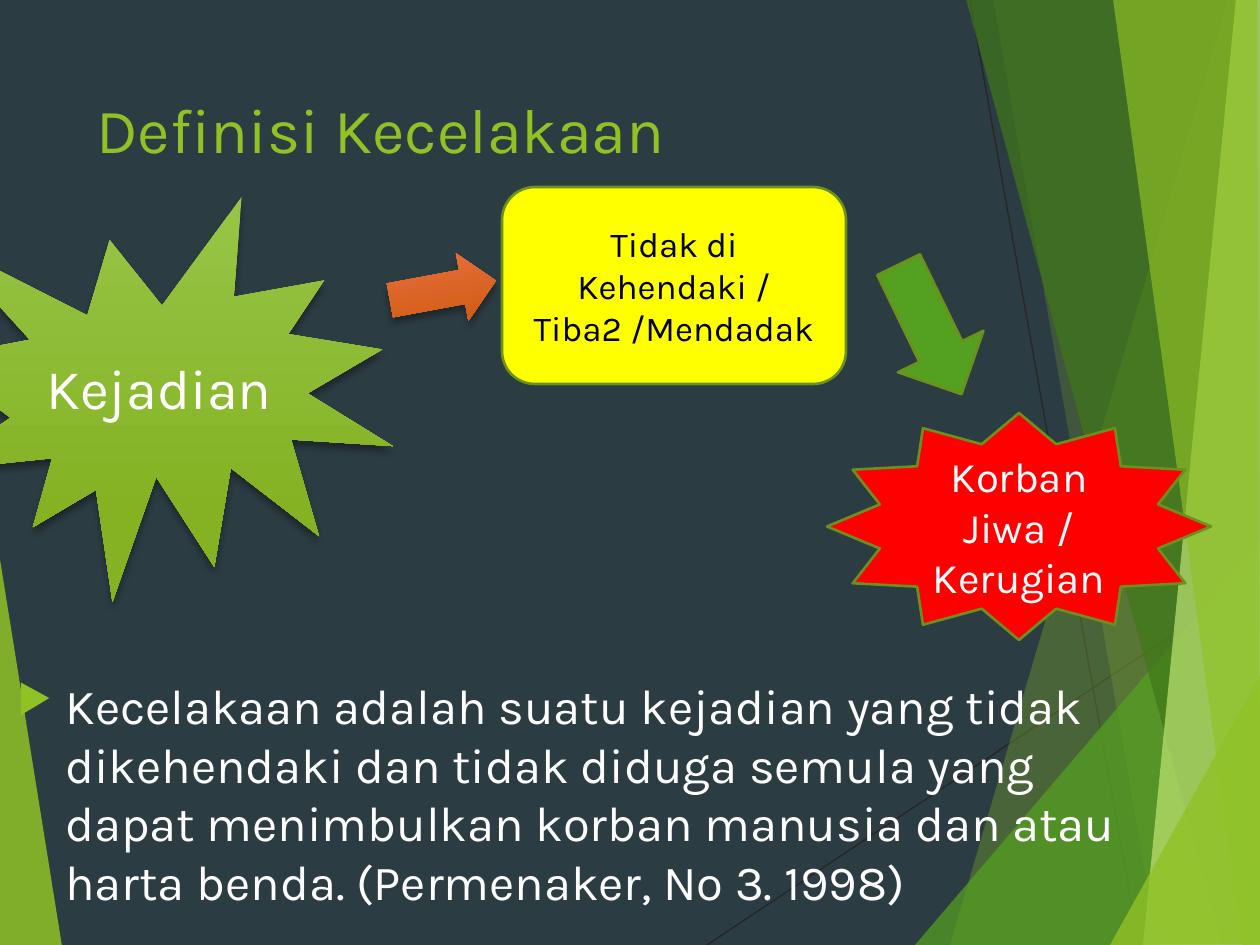
from lxml import etree
from pptx import Presentation
from pptx.dml.color import RGBColor
from pptx.enum.shapes import MSO_CONNECTOR, MSO_SHAPE
from pptx.enum.text import MSO_ANCHOR, PP_ALIGN
from pptx.oxml.ns import qn
from pptx.util import Pt

EMU_PER_PX = 914400 / 126
WIDTH, HEIGHT = 1260, 945
FONT = "Karla"
LINE = MSO_CONNECTOR.STRAIGHT
SEAL, STAR = MSO_SHAPE.EXPLOSION1, MSO_SHAPE.STAR_12_POINT
ARROW, ROUNDED = MSO_SHAPE.RIGHT_ARROW, MSO_SHAPE.ROUNDED_RECTANGLE
CENTER, LEFT = PP_ALIGN.CENTER, PP_ALIGN.LEFT
MIDDLE, TOP = MSO_ANCHOR.MIDDLE, MSO_ANCHOR.TOP

COLORS = {
    "background": "2C3C43", "hairline": "262626", "lime": "90C226",
    "green": "54A021", "forest": "3F7819", "pale": "C0E474",
    "outline": "6B901C", "yellow": "FFFF00", "red": "FF0000",
    "white": "FFFFFF", "black": "000000",
    "lime top": "97C547", "lime bottom": "84B223",
    "orange top": "E87242", "orange bottom": "D35D16",
}

TITLE = "Definisi Kecelakaan"
DEFINITION = ("Kecelakaan adalah suatu kejadian yang tidak dikehendaki dan tidak "
              "diduga semula yang dapat menimbulkan korban manusia dan atau harta "
              "benda. (Permenaker, No 3. 1998)")

# Background: hairlines (x1, y1, x2, y2), then facets (colour, opacity %, corners)
HAIRLINES = [(707, 945, 1261, 576), (970, 0, 1139, 945)]
FACETS = [
    ("lime", 85, [(-1, 553), (62, 946), (-1, 945)]),
    ("lime", 30, [(1228, 0), (950, 945), (1262, 946), (1261, 1)]),
    ("lime", 20, [(993, -1), (1158, 945), (1261, 945), (1261, -1)]),
    ("green", 72, [(915, 945), (1260, 541), (1261, 945)]),
    ("forest", 70, [(966, -1), (1222, 945), (1261, 944), (1261, -1)]),
    ("pale", 70, [(1236, -1), (1143, 945), (1261, 945), (1260, -1)]),
    ("lime", 65, [(1113, -1), (1242, 945), (1260, 945), (1257, -1)]),
    ("lime", 80, [(1110, 945), (1261, 674), (1261, 944)]),
]

# Flow: (preset, box, rotation, fill or gradient pair, text, size, text colour)
FLOW = [
    (SEAL, (-69, 197, 462, 405), 0, ("lime top", "lime bottom"),
     "Kejadian", 32, "white"),
    (ARROW, (389, 256, 108, 69), 349.5, ("orange top", "orange bottom"),
     None, None, None),
    (ROUNDED, (502, 187, 344, 197), 0, "yellow",
     "Tidak di Kehendaki / Tiba2 /Mendadak", 20, "black"),
    (STAR, (827, 413, 384, 227), 0, "red", "Korban Jiwa / Kerugian", 24, "white"),
    (ARROW, (858, 282, 144, 95), 64.1, "green", None, None, None),
]


def px(value):
    return round(value * EMU_PER_PX)


def place(box):
    return [px(value) for value in box]


def color(name):
    return RGBColor.from_string(COLORS[name])


def add_xml(parent, tag, **attributes):
    return etree.SubElement(parent, qn(tag), attributes)


def write(shape, text, size, text_color, align, anchor):
    frame = shape.text_frame
    frame.word_wrap = True
    frame.vertical_anchor = anchor
    para = frame.paragraphs[0]
    para.text = text
    para.alignment = align
    para.font.name, para.font.size = FONT, Pt(size)
    para.font.color.rgb = color(text_color)
    return para


def add_hairline(page, ends):
    line = page.shapes.add_connector(LINE, *place(ends))
    line.line.color.rgb = color("hairline")
    line.line.width = Pt(0.75)
    add_xml(line._element.spPr, "a:effectLst")


def add_facet(page, fill, opacity, corners):
    builder = page.shapes.build_freeform(*corners[0], scale=EMU_PER_PX)
    builder.add_line_segments(corners[1:], close=True)
    facet = builder.convert_to_shape()
    facet.shadow.inherit = False
    facet.line.fill.background()
    facet.fill.solid()
    facet.fill.fore_color.rgb = color(fill)
    solid = facet._element.spPr.find(qn("a:solidFill"))
    add_xml(solid[0], "a:alpha", val=str(opacity * 1000))


def fill_gradient(shape, names):
    shape.fill.gradient()
    shape.fill.gradient_angle = 270
    for stop, name, position in zip(shape.fill.gradient_stops, names, (0, 0.78)):
        stop.color.rgb = color(name)
        stop.position = position


def add_drop_shadow(shape):
    effects = shape._element.spPr.find(qn("a:effectLst"))
    shadow = add_xml(effects, "a:outerShdw", blurRad=str(Pt(4)), dist=str(Pt(3)),
                     dir="5400000", rotWithShape="0")
    shade = add_xml(shadow, "a:srgbClr", val=COLORS["black"])
    add_xml(shade, "a:alpha", val="35000")


def add_flow_shape(page, preset, box, rotation, fill, text, size, text_color):
    shape = page.shapes.add_shape(preset, *place(box))
    shape.rotation = rotation
    shape.shadow.inherit = False
    if isinstance(fill, tuple):
        fill_gradient(shape, fill)
        shape.line.fill.background()
        add_drop_shadow(shape)
    else:
        shape.fill.solid()
        shape.fill.fore_color.rgb = color(fill)
        shape.line.color.rgb = color("outline")
        shape.line.width = Pt(1.5)
    if text:
        write(shape, text, size, text_color, CENTER, MIDDLE)


def add_text(page, box, text, size, text_color):
    return write(page.shapes.add_textbox(*place(box)), text, size, text_color,
                 LEFT, TOP)


def add_bullet(para):
    para.space_before = Pt(10)
    props = para._p.get_or_add_pPr()
    props.set("marL", str(px(48)))
    props.set("indent", str(-px(48)))
    bullet_color = etree.Element(qn("a:buClr"))
    add_xml(bullet_color, "a:srgbClr", val=COLORS["lime"])
    bullet_size = etree.Element(qn("a:buSzPct"), val="80000")
    bullet = etree.Element(qn("a:buChar"), char="▶")
    # Bullet elements stand after the spacing and before the text defaults
    defaults = props.find(qn("a:defRPr"))
    for element in (bullet_color, bullet_size, bullet):
        defaults.addprevious(element)


def main():
    deck = Presentation()
    deck.slide_width, deck.slide_height = px(WIDTH), px(HEIGHT)
    page = deck.slides.add_slide(deck.slide_layouts[6])
    page.background.fill.solid()
    page.background.fill.fore_color.rgb = color("background")

    # Faceted background
    for ends in HAIRLINES:
        add_hairline(page, ends)
    for facet in FACETS:
        add_facet(page, *facet)

    # Title and definition
    add_text(page, (84, 84, 874, 181), TITLE, 36, "lime")
    add_bullet(add_text(page, (5, 669, 1131, 261), DEFINITION, 28, "white"))

    # Event, cause and consequence
    for item in FLOW:
        add_flow_shape(page, *item)

    deck.save("out.pptx")


if __name__ == "__main__":
    main()
